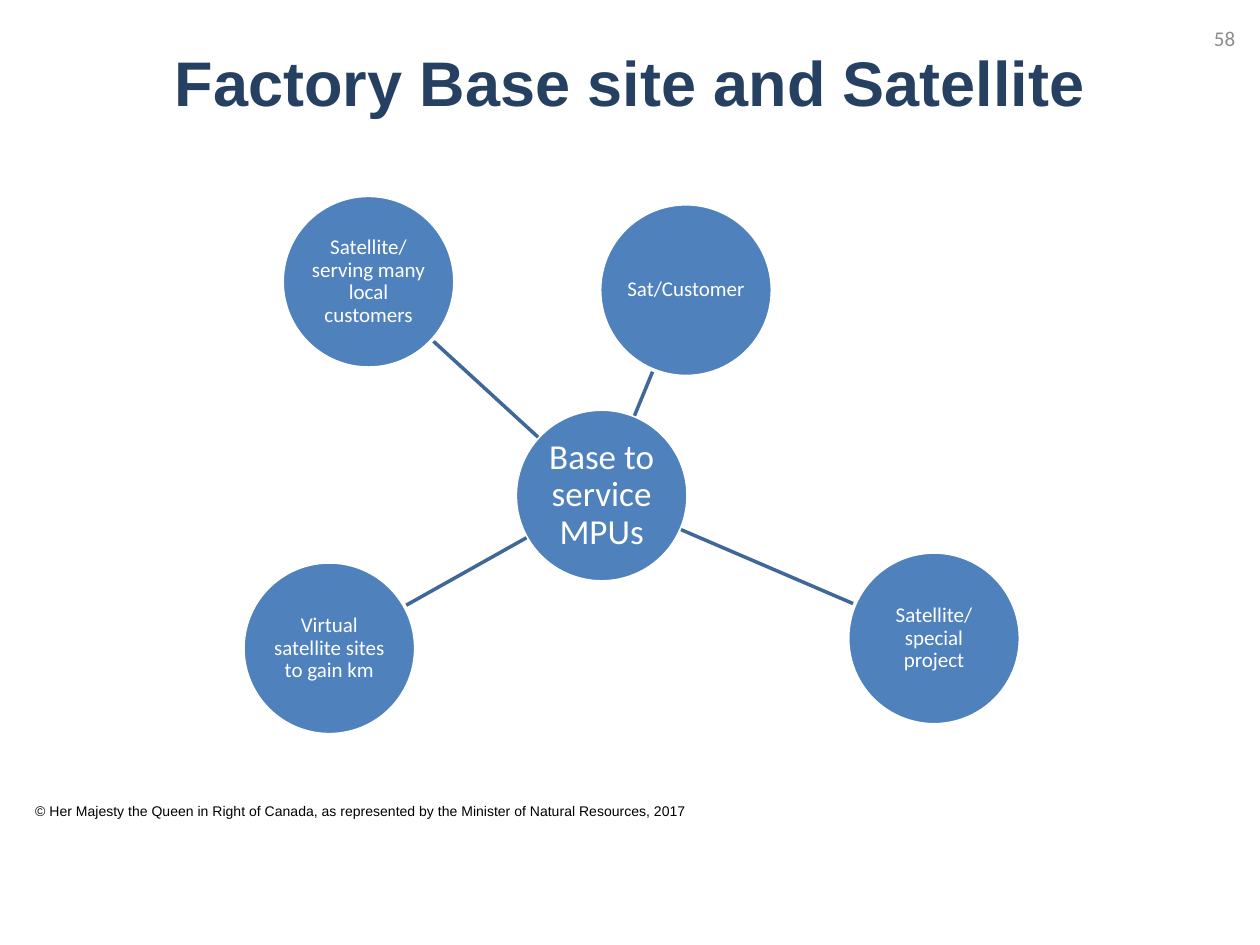
import math

import pptx
import pptx.dml.color
import pptx.enum.shapes
import pptx.enum.text
import pptx.oxml.ns
import pptx.util
from lxml import etree
from pptx.util import Cm

RGBColor = pptx.dml.color.RGBColor
Align = pptx.enum.text.PP_ALIGN
Anchor = pptx.enum.text.MSO_ANCHOR

NAVY = RGBColor(0x25, 0x40, 0x61)
BLUE = RGBColor(0x4F, 0x81, 0xBD)
DARK_BLUE = RGBColor(0x3F, 0x67, 0x97)
GREY = RGBColor(0x8C, 0x8C, 0x8C)
WHITE = RGBColor(0xFF, 0xFF, 0xFF)
BLACK = RGBColor(0x00, 0x00, 0x00)

presentation = pptx.Presentation()
presentation.slide_width = Cm(25.4)
presentation.slide_height = Cm(19.05)
slide = presentation.slides.add_slide(presentation.slide_layouts[6])


def write_text(shape, text, size, font, color, alignment, anchor, bold=False):
    frame = shape.text_frame
    frame.word_wrap = True
    frame.vertical_anchor = anchor
    paragraph = frame.paragraphs[0]
    paragraph.text = text
    paragraph.alignment = alignment
    paragraph.font.size = pptx.util.Pt(size)
    paragraph.font.name = font
    paragraph.font.bold = bold
    paragraph.font.color.rgb = color
    return paragraph


def add_circle(center_x, center_y, text, size):
    circle = slide.shapes.add_shape(
        pptx.enum.shapes.MSO_SHAPE.OVAL,
        Cm(center_x - RADIUS), Cm(center_y - RADIUS), Cm(2 * RADIUS), Cm(2 * RADIUS))
    circle.shadow.inherit = False
    circle.fill.solid()
    circle.fill.fore_color.rgb = BLUE
    circle.line.color.rgb = WHITE
    circle.line.width = pptx.util.Pt(2)
    paragraph = write_text(circle, text, size, "Calibri", WHITE, Align.CENTER, Anchor.MIDDLE)
    paragraph.line_spacing = 0.9
    frame = circle.text_frame
    frame.margin_left = frame.margin_right = Cm(0.03)
    frame.margin_top = frame.margin_bottom = Cm(0.03)


# Copyright line, title and slide number
copyright_box = slide.shapes.add_textbox(Cm(0.46), Cm(16.05), Cm(13.82), Cm(0.94))
write_text(copyright_box,
           "© Her Majesty the Queen in Right of Canada, as represented by the "
           "Minister of Natural Resources, 2017",
           8, "Arial", BLACK, Align.LEFT, Anchor.TOP)

title_box = slide.shapes.add_textbox(Cm(1.27), Cm(0.76), Cm(22.86), Cm(3.18))
write_text(title_box, "Factory Base site and Satellite",
           36, "Arial", NAVY, Align.CENTER, Anchor.TOP, bold=True)

number_box = slide.shapes.add_textbox(Cm(23.85), Cm(0.25), Cm(1.3), Cm(1.02))
write_text(number_box, "58", 12, "Calibri", GREY, Align.RIGHT, Anchor.MIDDLE)

# Base in the middle
RADIUS = 1.74
BASE_X, BASE_Y = 12.13, 9.99
add_circle(BASE_X, BASE_Y, "Base to service MPUs", 20)

# Satellites, each joined to the base from edge to edge
satellites = [
    (6.64, 13.07, "Virtual satellite sites to gain km"),
    (13.83, 5.85, "Sat/Customer"),
    (18.83, 12.87, "Satellite/ special project"),
    (7.43, 5.68, "Satellite/ serving many local customers"),
]
for center_x, center_y, text in satellites:
    angle = math.atan2(center_y - BASE_Y, center_x - BASE_X)
    offset_x, offset_y = RADIUS * math.cos(angle), RADIUS * math.sin(angle)
    connector = slide.shapes.add_connector(
        pptx.enum.shapes.MSO_CONNECTOR.STRAIGHT,
        Cm(BASE_X + offset_x), Cm(BASE_Y + offset_y),
        Cm(center_x - offset_x), Cm(center_y - offset_y))
    connector.line.color.rgb = DARK_BLUE
    connector.line.width = pptx.util.Pt(2)
    properties = connector._element.spPr
    etree.SubElement(properties, pptx.oxml.ns.qn("a:effectLst"))
    add_circle(center_x, center_y, text, 12)

presentation.save("out.pptx")
